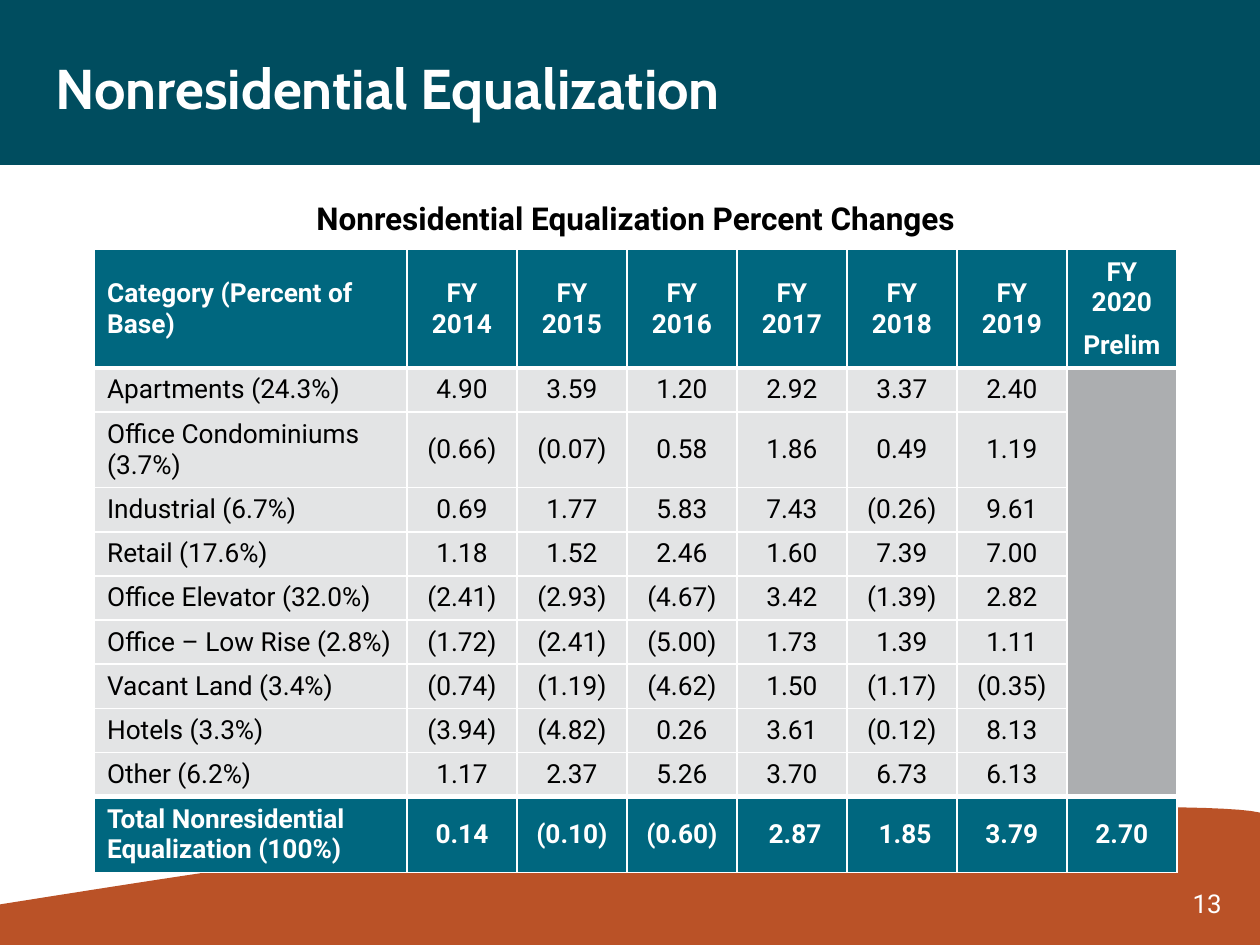
import pptx
import pptx.dml.color
import pptx.enum.shapes
import pptx.enum.text
import pptx.oxml.ns
import pptx.util
from lxml import etree

COLORS = {"rust": "BA5227", "band": "004D5F", "teal": "00677F", "light": "E3E4E5",
          "gray": "ACAEB0", "white": "FFFFFF", "black": "000000"}
RGB = {name: pptx.dml.color.RGBColor.from_string(c) for name, c in COLORS.items()}
ALIGN = pptx.enum.text.PP_ALIGN
qn = pptx.oxml.ns.qn

prs = pptx.Presentation()
prs.slide_width, prs.slide_height = pptx.util.Inches(10), pptx.util.Inches(7.5)
s = prs.slides.add_slide(prs.slide_layouts[6])


def area(*shares):
    """Turn alternating percentages of slide width and height into lengths."""
    sides = (prs.slide_width, prs.slide_height)
    return [pptx.util.Emu(round(v * sides[i % 2] / 100)) for i, v in enumerate(shares)]


def write(tf, text, size=15, font="Roboto", color="black", bold=False, align=ALIGN.CENTER):
    """Write one paragraph per line of text."""
    tf.word_wrap = True
    for i, line in enumerate(text.split("\n")):
        p = tf.add_paragraph() if i else tf.paragraphs[0]
        p.alignment = align
        if i:
            p.space_before = pptx.util.Pt(6.4)
        if not line:
            etree.SubElement(p._p, qn("a:endParaRPr"), sz=str(size * 100))
            continue
        r = p.add_run()
        r.text = line
        r.font.size, r.font.name, r.font.bold = pptx.util.Pt(size), font, bold
        r.font.color.rgb = RGB[color]


# Rust wave at the bottom, traced from two cubic curves
curves = [((100, 100), (100, 96.27), (100, 89.87), (100, 86)),
          ((100, 86), (95.5, 84.53), (63.2, 86.13), (46.5, 87.6)),
          ((46.5, 87.6), (29.9, 89.2), (10.1, 93.6), (-0.1, 95.73))]
points = []
STEPS = 24
for curve in curves:
    for step in range(1, STEPS + 1):
        t = step / STEPS
        weights = ((1 - t) ** 3, 3 * t * (1 - t) ** 2, 3 * t ** 2 * (1 - t), t ** 3)
        points.append(area(*(sum(w * pt[axis] for w, pt in zip(weights, curve))
                             for axis in (0, 1))))
builder = s.shapes.build_freeform(*area(0, 100))
builder.add_line_segments([area(100, 100)] + points, close=True)
wave = builder.convert_to_shape()

# Title band
band = s.shapes.add_shape(pptx.enum.shapes.MSO_SHAPE.RECTANGLE, *area(0, 0, 100, 17.47))
for sp, color in ((wave, "rust"), (band, "band")):
    sp.shadow.inherit = False
    sp.fill.solid()
    sp.fill.fore_color.rgb = RGB[color]
    sp.line.fill.background()

# Page number, title and table caption
texts = [
    ("13", (93.3, 93.33, 5, 4.4), dict(size=14.8, color="white")),
    ("Nonresidential Equalization", (3.4, 2.8, 92.9, 12.8),
     dict(size=32, font="Cabin", color="white", bold=True, align=ALIGN.LEFT)),
    ("Nonresidential Equalization Percent Changes", (7.5, 20.4, 85.9, 5.33),
     dict(size=18, bold=True)),
]
for text, place, style in texts:
    tf = s.shapes.add_textbox(*area(*place)).text_frame
    tf.vertical_anchor = pptx.enum.text.MSO_ANCHOR.MIDDLE
    if text == "13":
        tf.margin_left = tf.margin_right = pptx.util.Inches(0.05)
    write(tf, text, **style)

# Table contents
rows = [
    ["Category (Percent of Base)", *(f"FY {year}" for year in range(2014, 2020)),
     "FY 2020\nPrelim"],
    ["Apartments (24.3%)", "4.90", "3.59", "1.20", "2.92", "3.37", "2.40", ""],
    ["Office Condominiums (3.7%)", "(0.66)", "(0.07)", "0.58", "1.86", "0.49", "1.19", ""],
    ["Industrial (6.7%)", "0.69", "1.77", "5.83", "7.43", "(0.26)", "9.61", ""],
    ["Retail (17.6%)", "1.18", "1.52", "2.46", "1.60", "7.39", "7.00", ""],
    ["Office Elevator (32.0%)", "(2.41)", "(2.93)", "(4.67)", "3.42", "(1.39)", "2.82", ""],
    ["Office – Low Rise (2.8%)", "(1.72)", "(2.41)", "(5.00)", "1.73", "1.39", "1.11", ""],
    ["Vacant Land (3.4%)", "(0.74)", "(1.19)", "(4.62)", "1.50", "(1.17)", "(0.35)", ""],
    ["Hotels (3.3%)", "(3.94)", "(4.82)", "0.26", "3.61", "(0.12)", "8.13", ""],
    ["Other (6.2%)", "1.17", "2.37", "5.26", "3.70", "6.73", "6.13", ""],
    ["Total Nonresidential Equalization (100%)", "0.14", "(0.10)", "(0.60)", " 2.87",
     " 1.85", "3.79", "2.70"],
]
last = len(rows) - 1
tall = {0: 12.35, 2: 7.87, last: 7.87}

# Table grid, in the plain style without borders
table = s.shapes.add_table(len(rows), len(rows[0]), *area(7.5, 26.4, 85.9, 64.8)).table
table.horz_banding = False
table._tbl.tblPr.find(qn("a:tableStyleId")).text = "{2D5ABB26-0587-4C30-8999-92F81FD0307C}"
for i, column in enumerate(table.columns):
    column.width = area(8.73 if i else 24.8)[0]
for i, row in enumerate(table.rows):
    row.height = area(0, tall.get(i, 4.59))[1]

# Cells: teal header and total, light body, gray block where no value is given
for i, values in enumerate(rows):
    strong = i in (0, last)
    for j, text in enumerate(values):
        cell = table.cell(i, j)
        cell.vertical_anchor = pptx.enum.text.MSO_ANCHOR.MIDDLE
        write(cell.text_frame, text, color="white" if strong else "black", bold=strong,
              align=ALIGN.CENTER if j else ALIGN.LEFT)
        widths = {"L": 1, "R": 1,
                  "T": 3 if i in (1, last) else 1 if text or i == 0 else 0,
                  "B": 3 if i in (0, last - 1) else 1 if text else 0}
        for side, width in widths.items():
            ln = etree.SubElement(cell._tc.get_or_add_tcPr(), qn(f"a:ln{side}"),
                                  w=str(pptx.util.Pt(width)))
            if width:
                fill = etree.SubElement(ln, qn("a:solidFill"))
                etree.SubElement(fill, qn("a:srgbClr"), val=COLORS["white"])
            else:
                etree.SubElement(ln, qn("a:noFill"))
        cell.fill.solid()
        cell.fill.fore_color.rgb = RGB["teal" if strong else "light" if text else "gray"]

prs.save("out.pptx")
